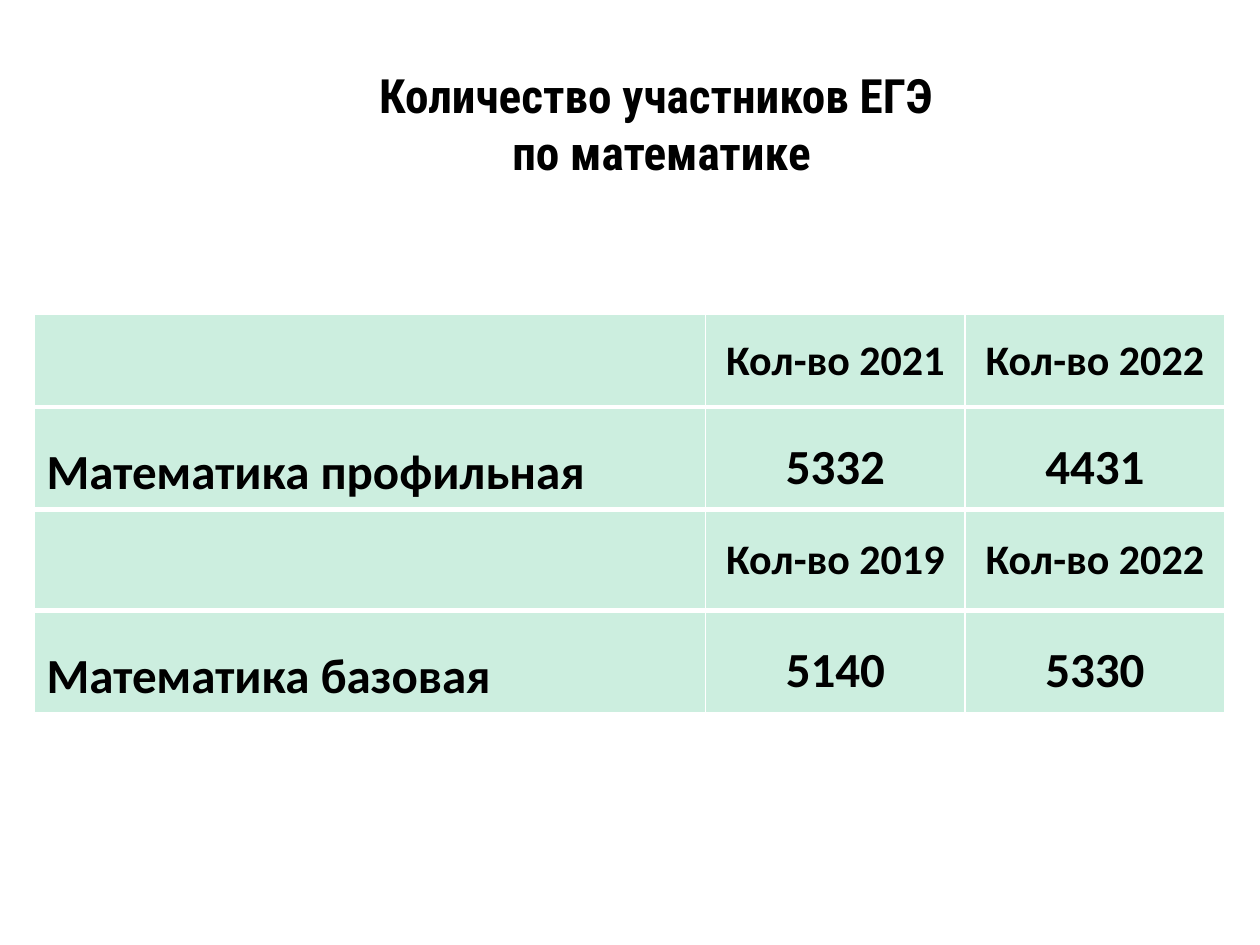
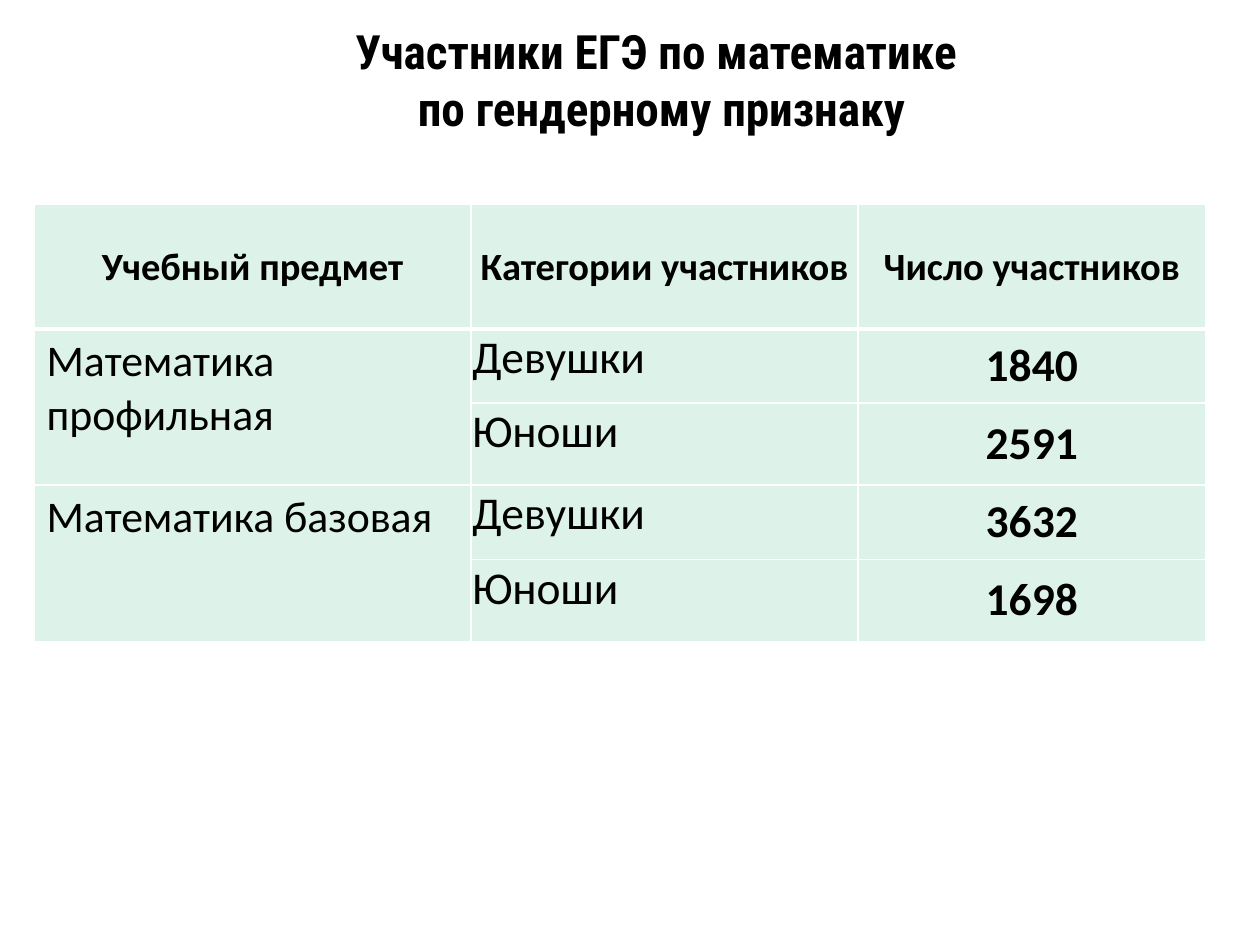
from collections import namedtuple

from lxml import etree
from pptx import Presentation
from pptx.dml.color import RGBColor
from pptx.enum.text import MSO_ANCHOR, MSO_AUTO_SIZE, PP_ALIGN
from pptx.oxml.ns import qn
from pptx.util import Inches, Pt

LEFT, CENTER = PP_ALIGN.LEFT, PP_ALIGN.CENTER
TOP, MIDDLE = MSO_ANCHOR.TOP, MSO_ANCHOR.MIDDLE
NO_AUTOFIT = MSO_AUTO_SIZE.NONE

BLACK = RGBColor(0x00, 0x00, 0x00)
WHITE = RGBColor(0xFF, 0xFF, 0xFF)
MINT = RGBColor(0xCC, 0xEE, 0xDF)
PALE_MINT = RGBColor(0xDD, 0xF3, 0xEA)

TITLE_FONT = "Roboto Condensed"
TABLE_FONT = "Calibri"
THIN, THICK = Pt(1), Pt(3)

WIDE = (0.1, 0.05, 0.1, 0.05)
TIGHT = (0.01, 0.01, 0.01, 0)
SIDES = (0.08, 0, 0.08, 0)

CellStyle = namedtuple(
    "CellStyle", "size bold align anchor insets spacing after",
    defaults=(True, LEFT, TOP, WIDE, None, None))

YEAR = CellStyle(24, align=CENTER, anchor=MIDDLE, insets=TIGHT)
SUBJECT = CellStyle(28, spacing=1.5)
COUNT = CellStyle(28, align=CENTER, insets=TIGHT, spacing=1.5)

HEADING = CellStyle(22, align=CENTER, anchor=MIDDLE, insets=TIGHT)
GROUP = CellStyle(25, bold=False, after=6)
GENDER = CellStyle(26, bold=False, insets=TIGHT, after=6)
NUMBER = CellStyle(26, align=CENTER, anchor=MIDDLE, insets=SIDES, after=6)


class Deck:
    def __init__(self):
        self.prs = Presentation()
        self.prs.slide_width = Inches(10)
        self.prs.slide_height = Inches(7.5)
        self.s = None

    def slide(self):
        self.s = self.prs.slides.add_slide(self.prs.slide_layouts[5])
        fill = self.s.background.fill
        fill.solid()
        fill.fore_color.rgb = WHITE

    def run(self, p, text, font, size, bold):
        r = p.add_run()
        r.text = text
        r.font.name = font
        r.font.size = Pt(size)
        r.font.bold = bold
        r.font.color.rgb = BLACK

    def title(self, lines, height):
        sp = self.s.shapes.title
        sp.left, sp.top = Inches(0.5), Inches(0.17)
        sp.width, sp.height = Inches(9.5), Inches(height)
        tf = sp.text_frame
        tf.word_wrap = True
        tf.auto_size = NO_AUTOFIT
        tf.vertical_anchor = MIDDLE
        p = tf.paragraphs[0]
        p.alignment = CENTER
        for i, line in enumerate(lines):
            if i:
                p.add_line_break()
            self.run(p, line, TITLE_FONT, 27, True)

    def borders(self, cell, top, bottom):
        tc_pr = cell._tc.get_or_add_tcPr()
        edges = (("a:lnL", THIN), ("a:lnR", THIN), ("a:lnT", top), ("a:lnB", bottom))
        for i, (tag, width) in enumerate(edges):
            ln = etree.Element(qn(tag), w=str(width))
            fill = etree.SubElement(ln, qn("a:solidFill"))
            etree.SubElement(fill, qn("a:srgbClr"), val=str(WHITE))
            tc_pr.insert(i, ln)

    def cell_text(self, cell, text, style):
        insets = [Inches(v) for v in style.insets]
        cell.margin_left, cell.margin_top, cell.margin_right, cell.margin_bottom = insets
        cell.vertical_anchor = style.anchor
        p = cell.text_frame.paragraphs[0]
        p.alignment = style.align
        if style.spacing:
            p.line_spacing = style.spacing
        if style.after:
            p.space_after = Pt(style.after)
        self.run(p, text, TABLE_FONT, style.size, style.bold)

    def table(self, top, widths, heights, rows, styles, color, thick_rules, merges=()):
        frame = self.s.shapes.add_table(
            len(heights), len(widths), Inches(0.27), Inches(top),
            Inches(sum(widths)), Inches(sum(heights)))
        table = frame.table
        table.horz_banding = False
        for column, width in zip(table.columns, widths):
            column.width = Inches(width)
        for row, height in zip(table.rows, heights):
            row.height = Inches(height)
        rules = [THICK if i in thick_rules else THIN for i in range(len(heights) + 1)]
        for i, (texts, row_styles) in enumerate(zip(rows, styles)):
            for j, (text, style) in enumerate(zip(texts, row_styles)):
                cell = table.cell(i, j)
                cell.fill.solid()
                cell.fill.fore_color.rgb = color
                self.borders(cell, rules[i], rules[i + 1])
                if text:
                    self.cell_text(cell, text, style)
        for first, last in merges:
            table.cell(first, 0).merge(table.cell(last, 0))


def main():
    deck = Deck()

    deck.slide()
    deck.title(["Количество участников ЕГЭ ", "по математике"], 1.61)
    deck.table(
        top=2.49, widths=[5.33, 2.06, 2.06], heights=[0.74, 0.8, 0.8, 0.8],
        rows=[
            ["", "Кол-во 2021", "Кол-во 2022"],
            ["Математика профильная", "5332", "4431"],
            ["", "Кол-во 2019", "Кол-во 2022"],
            ["Математика базовая", "5140", "5330"],
        ],
        styles=[[YEAR] * 3, [SUBJECT, COUNT, COUNT]] * 2,
        color=MINT, thick_rules=(1, 2, 3))

    deck.slide()
    deck.title(["Участники ЕГЭ по математике ", "по гендерному признаку"], 0.91)
    deck.table(
        top=1.62, widths=[3.47, 3.07, 2.76], heights=[0.99] + [0.59, 0.65] * 2,
        rows=[
            ["Учебный предмет", "Категории участников", "Число участников"],
            ["Математика профильная", "Девушки", "1840"],
            ["", "Юноши", "2591"],
            ["Математика базовая", "Девушки", "3632"],
            ["", "Юноши", "1698"],
        ],
        styles=[[HEADING] * 3] + [[GROUP, GENDER, NUMBER]] * 4,
        color=PALE_MINT, thick_rules=(1,), merges=[(1, 2), (3, 4)])

    deck.prs.save("out.pptx")


if __name__ == "__main__":
    main()
